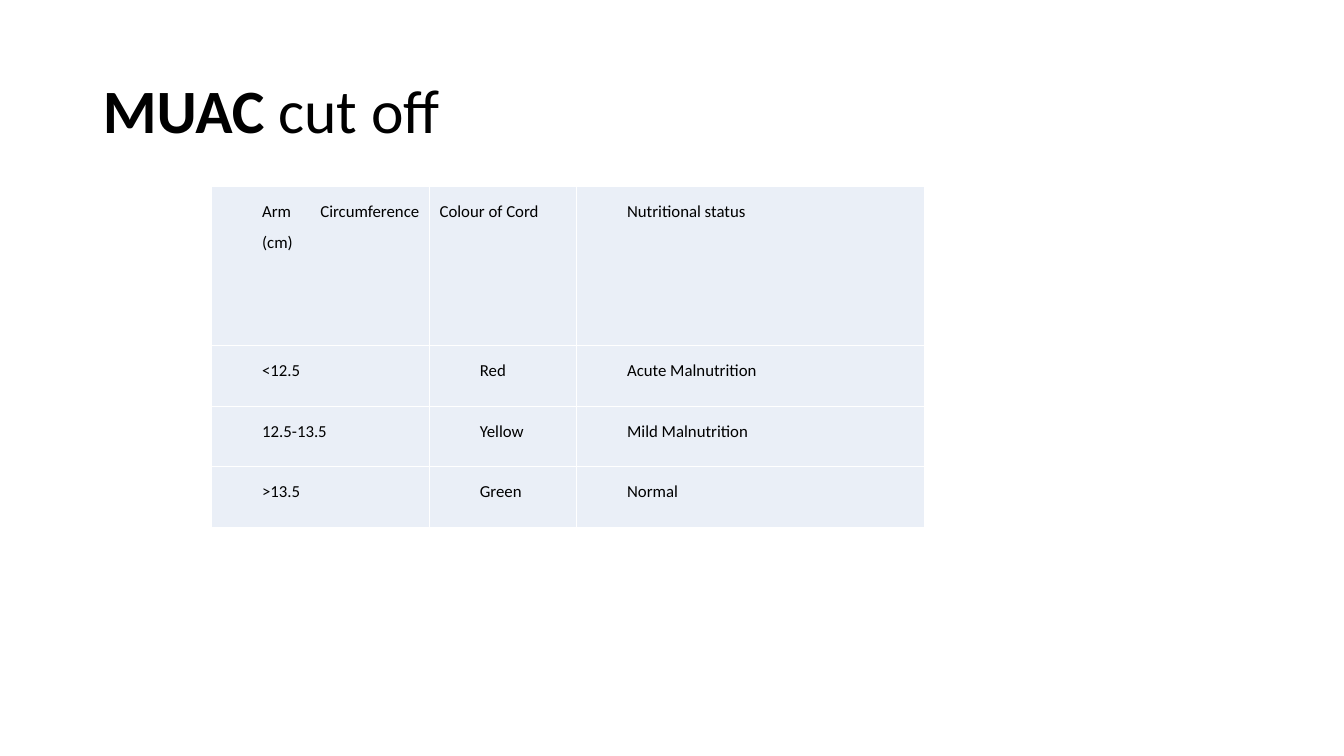
from dataclasses import dataclass

from lxml.etree import SubElement
from pptx import Presentation
from pptx.dml.color import RGBColor
from pptx.enum.text import MSO_ANCHOR as Anchor, PP_ALIGN as Align
from pptx.oxml.ns import qn
from pptx.util import Inches, Pt

COLOURS = {"text": "000000", "cell": "EAEFF7", "border": "FFFFFF"}
FONT = "Calibri"
INDENT = Inches(0.4)
COLUMN_WIDTHS = (2.16, 1.46, 3.45)
ROW_HEIGHTS = (1.58, 0.6, 0.6, 0.6)


@dataclass(frozen=True)
class Entry:
    text: str
    indent: int = INDENT


CUT_OFFS = (
    (Entry("Arm Circumference (cm)"), Entry("Colour of Cord", 0), Entry("Nutritional status")),
    (Entry("<12.5"), Entry("Red"), Entry("Acute Malnutrition")),
    (Entry("12.5-13.5"), Entry("Yellow"), Entry("Mild Malnutrition")),
    (Entry(">13.5"), Entry("Green"), Entry("Normal")),
)


def add_run(paragraph, text: str, size: float, bold: bool = False) -> None:
    run = paragraph.add_run()
    run.text = text
    for name, value in {"name": FONT, "size": Pt(size), "bold": bold}.items():
        setattr(run.font, name, value)
    run.font.color.rgb = RGBColor.from_string(COLOURS["text"])


def add_borders(cell) -> None:
    properties = cell._tc.get_or_add_tcPr()
    for side in ("a:lnL", "a:lnR", "a:lnT", "a:lnB"):
        line = SubElement(properties, qn(side), w=str(Pt(1)))
        fill = SubElement(line, qn("a:solidFill"))
        SubElement(fill, qn("a:srgbClr"), val=COLOURS["border"])


def fill_cell(cell, entry: Entry) -> None:
    add_borders(cell)
    cell.fill.solid()
    cell.fill.fore_color.rgb = RGBColor.from_string(COLOURS["cell"])
    paragraph = cell.text_frame.paragraphs[0]
    paragraph.alignment = Align.JUSTIFY
    paragraph.line_spacing = 1.5
    paragraph._p.get_or_add_pPr().set("marL", str(entry.indent))
    add_run(paragraph, entry.text, 12)


def add_title(slide) -> None:
    title = slide.shapes.title
    place = {"left": 0.92, "top": 0.4, "width": 11.5, "height": 1.45}
    for name, value in place.items():
        setattr(title, name, Inches(value))
    title.text_frame.vertical_anchor = Anchor.MIDDLE
    heading = title.text_frame.paragraphs[0]
    heading.alignment = Align.LEFT
    heading.line_spacing = 0.9
    add_run(heading, "MUAC", 44, bold=True)
    add_run(heading, " cut off", 44)


def add_cut_off_table(slide) -> None:
    table = slide.shapes.add_table(
        len(ROW_HEIGHTS), len(COLUMN_WIDTHS), Inches(2.1), Inches(1.85),
        Inches(sum(COLUMN_WIDTHS)), Inches(sum(ROW_HEIGHTS)),
    ).table
    table.first_row = table.horz_banding = False
    for column, width in zip(table.columns, COLUMN_WIDTHS):
        column.width = Inches(width)
    for row, height, entries in zip(table.rows, ROW_HEIGHTS, CUT_OFFS):
        row.height = Inches(height)
        for cell, entry in zip(row.cells, entries):
            fill_cell(cell, entry)


def main() -> None:
    deck = Presentation()
    deck.slide_width, deck.slide_height = Inches(13.33), Inches(7.5)
    slide = deck.slides.add_slide(deck.slide_layouts.get_by_name("Title Only"))
    add_title(slide)
    add_cut_off_table(slide)
    deck.save("out.pptx")


if __name__ == "__main__":
    main()
